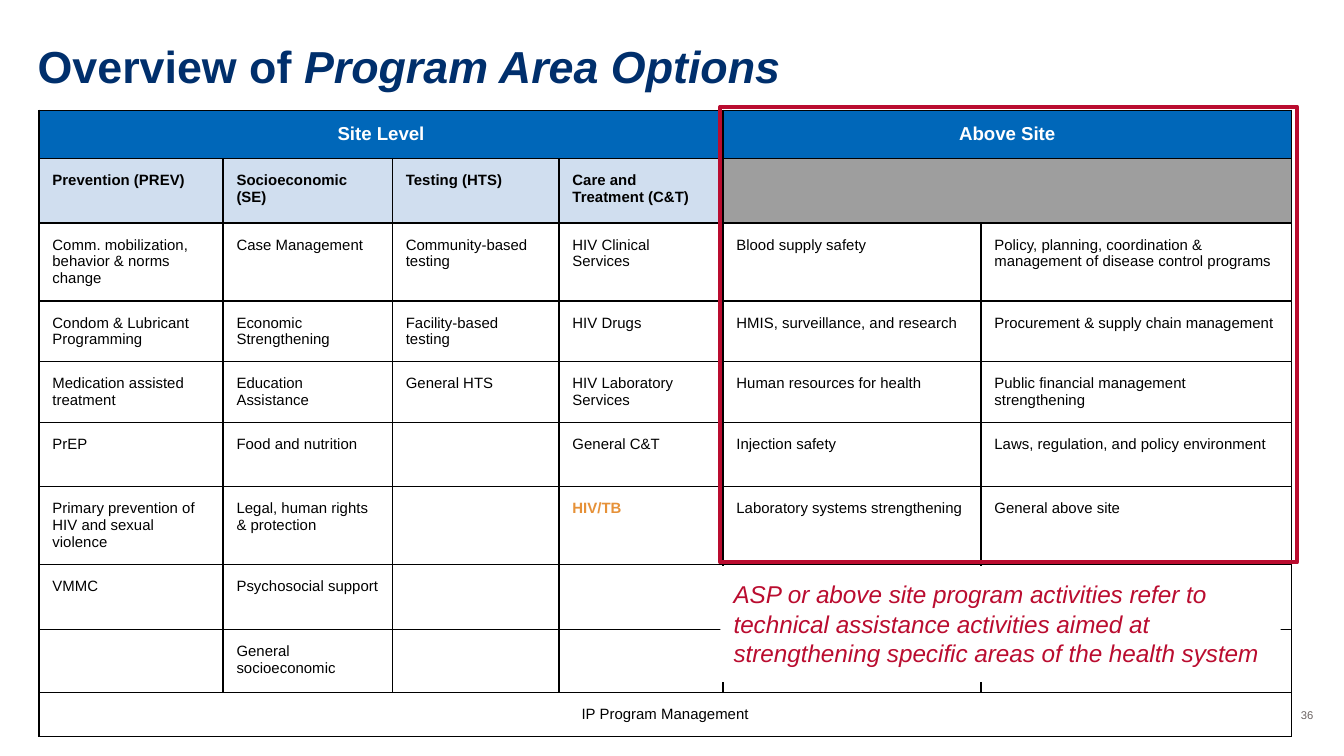
from dataclasses import dataclass
from typing import Optional

from lxml import etree
from pptx import Presentation
from pptx import util as u
from pptx.dml.color import RGBColor
from pptx.enum import shapes, text
from pptx.oxml.ns import qn

WIDTH = 10
HEIGHT = WIDTH * 9 / 16
COLORS = {"navy": "002F6C", "blue": "0067B9", "pale": "D0DEEF", "gray": "9E9E9E", "white": "FFFFFF",
          "black": "000000", "orange": "E69138", "crimson": "BA0C2F", "stone": "6C6463"}
COLUMNS = [1.37, 1.26, 1.24, 1.22, 1.92, 2.31]
ROWS = [0.36, 0.48, 0.58, 0.45, 0.45, 0.48, 0.58, 0.48, 0.47, 0.33]
TABLE_LEFT, TABLE_TOP = 0.29, 0.82
ABOVE_SITE = 4
CONTENT = [
    ["Site Level", "", "", "", "Above Site", ""],
    ["Prevention (PREV)", "Socioeconomic (SE)", "Testing (HTS)", "Care and Treatment (C&T)", "", ""],
    ["Comm. mobilization, behavior & norms change", "Case Management", "Community-based testing",
     "HIV Clinical Services", "Blood supply safety",
     "Policy, planning, coordination & management of disease control programs"],
    ["Condom & Lubricant Programming", "Economic Strengthening", "Facility-based testing", "HIV Drugs",
     "HMIS, surveillance, and research", "Procurement & supply chain management"],
    ["Medication assisted treatment", "Education Assistance", "General HTS", "HIV Laboratory Services",
     "Human resources for health", "Public financial management strengthening"],
    ["PrEP", "Food and nutrition", "", "General C&T", "Injection safety",
     "Laws, regulation, and policy environment"],
    ["Primary prevention of HIV and sexual violence", "Legal, human rights & protection", "", "HIV/TB",
     "Laboratory systems strengthening", "General above site"],
    ["VMMC", "Psychosocial support", "", "", "", ""],
    ["", "General socioeconomic", "", "", "", ""],
    ["IP Program Management", "", "", "", "", ""],
]
LEFT, CENTER, RIGHT = text.PP_ALIGN.LEFT, text.PP_ALIGN.CENTER, text.PP_ALIGN.RIGHT


@dataclass(frozen=True)
class Box:
    """A rectangle given as shares of the slide's size."""
    left: float
    top: float
    width: float
    height: float

    def lengths(self) -> list:
        shares = (self.left, self.top, self.width, self.height)
        return [u.Inches(share * side) for share, side in zip(shares, (WIDTH, HEIGHT) * 2)]


@dataclass(frozen=True)
class Style:
    """The look of a piece of text."""
    size: float
    color: str = "black"
    bold: bool = False
    italic: bool = False
    align: text.PP_ALIGN = LEFT


@dataclass(frozen=True)
class Span:
    """A merged run of cells within one row."""
    row: int
    first: int
    last: int


SPANS = [Span(0, 0, 3), Span(0, 4, 5), Span(1, 4, 5), Span(9, 0, 5)]
BODY = Style(8)
HEADING = Style(10, "white", bold=True, align=CENTER)
SUBHEADING = Style(8, bold=True)
FOOTING = Style(8, align=CENTER)
HIGHLIGHT = Style(8, "orange", bold=True)


def rgb(name: str) -> RGBColor:
    return RGBColor.from_string(COLORS[name])


def format_paragraph(paragraph, style: Style) -> None:
    paragraph.alignment = style.align
    for run in paragraph.runs:
        font = run.font
        font.name, font.size = "Arial", u.Pt(style.size)
        font.bold, font.italic = style.bold, style.italic
        font.color.rgb = rgb(style.color)


def set_frame(frame, anchor: text.MSO_ANCHOR, vertical: float = 0.1) -> None:
    frame.word_wrap, frame.auto_size = True, text.MSO_AUTO_SIZE.NONE
    frame.vertical_anchor = anchor
    frame.margin_left = frame.margin_right = u.Inches(0.1)
    frame.margin_top = frame.margin_bottom = u.Inches(vertical)


def add_title(slide) -> None:
    title = slide.shapes.title
    title.left, title.top, title.width, title.height = Box(0.018, 0.03, 0.932, 0.11).lengths()
    set_frame(title.text_frame, text.MSO_ANCHOR.BOTTOM)
    paragraph = title.text_frame.paragraphs[0]
    for words in ("Overview of ", "Program Area Options"):
        paragraph.add_run().text = words
    format_paragraph(paragraph, Style(24, "navy", bold=True))
    paragraph.runs[1].font.italic = True


def add_borders(cell) -> None:
    properties = cell._tc.get_or_add_tcPr()
    for index, side in enumerate(("lnL", "lnR", "lnT", "lnB")):
        line = etree.Element(qn(f"a:{side}"), w=str(u.Pt(0.75)))
        fill = etree.SubElement(line, qn("a:solidFill"))
        etree.SubElement(fill, qn("a:srgbClr"), val=COLORS["black"])
        properties.insert(index, line)


def cell_style(row: int, words: str) -> Style:
    if words == "HIV/TB":
        return HIGHLIGHT
    return {0: HEADING, 1: SUBHEADING, len(ROWS) - 1: FOOTING}.get(row, BODY)


def cell_fill(row: int, column: int) -> Optional[str]:
    if row == 0:
        return "blue"
    if row == 1:
        return "gray" if column >= ABOVE_SITE else "pale"
    return None


def fill_cell(cell, row: int, column: int, words: str) -> None:
    margin = u.Inches(0.1 if words else 0)
    cell.margin_left = cell.margin_right = cell.margin_top = cell.margin_bottom = margin
    if words:
        cell.text_frame.text = words
        format_paragraph(cell.text_frame.paragraphs[0], cell_style(row, words))
    fill = cell_fill(row, column)
    if fill:
        cell.fill.solid()
        cell.fill.fore_color.rgb = rgb(fill)
    else:
        cell.fill.background()
    add_borders(cell)


def add_options_table(slide) -> None:
    lengths = [u.Inches(n) for n in (TABLE_LEFT, TABLE_TOP, sum(COLUMNS), sum(ROWS))]
    table = slide.shapes.add_table(len(ROWS), len(COLUMNS), *lengths).table
    table.first_row = table.horz_banding = False
    for column, width in zip(table.columns, COLUMNS):
        column.width = u.Inches(width)
    for row, height in zip(table.rows, ROWS):
        row.height = u.Inches(height)
    for row, entries in enumerate(CONTENT):
        for column, words in enumerate(entries):
            fill_cell(table.cell(row, column), row, column, words)
    for span in SPANS:
        table.cell(span.row, span.first).merge(table.cell(span.row, span.last))
    table.cell(0, ABOVE_SITE).vertical_anchor = text.MSO_ANCHOR.MIDDLE


def add_rectangle(slide, box: Box, fill: Optional[str] = None, line: Optional[str] = None):
    shape = slide.shapes.add_shape(shapes.MSO_SHAPE.RECTANGLE, *box.lengths())
    shape.shadow.inherit = False
    for paint, color in ((shape.fill, fill), (shape.line.fill, line)):
        if color:
            paint.solid()
            paint.fore_color.rgb = rgb(color)
        else:
            paint.background()
    return shape


def write(shape, words: str, style: Style, anchor: text.MSO_ANCHOR, vertical: float = 0.1) -> None:
    set_frame(shape.text_frame, anchor, vertical)
    shape.text_frame.text = words
    format_paragraph(shape.text_frame.paragraphs[0], style)


def main() -> None:
    """Build the slide of program area options."""
    presentation = Presentation()
    presentation.slide_width, presentation.slide_height = u.Inches(WIDTH), u.Inches(HEIGHT)
    slide = presentation.slides.add_slide(presentation.slide_layouts[5])
    add_title(slide)
    number = slide.shapes.add_textbox(*Box(0.927, 0.907, 0.06, 0.077).lengths())
    write(number, "36", Style(6, "stone", align=RIGHT), text.MSO_ANCHOR.MIDDLE, 0.05)
    add_options_table(slide)
    frame = add_rectangle(slide, Box(0.536, 0.141, 0.429, 0.603), line="crimson")
    frame.line.width = u.Pt(2.25)
    note = add_rectangle(slide, Box(0.536, 0.749, 0.417, 0.153), fill="white")
    write(note, "ASP or above site program activities refer to technical assistance activities aimed at "
          "strengthening specific areas of the health system",
          Style(13, "crimson", italic=True), text.MSO_ANCHOR.TOP)
    presentation.save("out.pptx")


if __name__ == "__main__":
    main()
